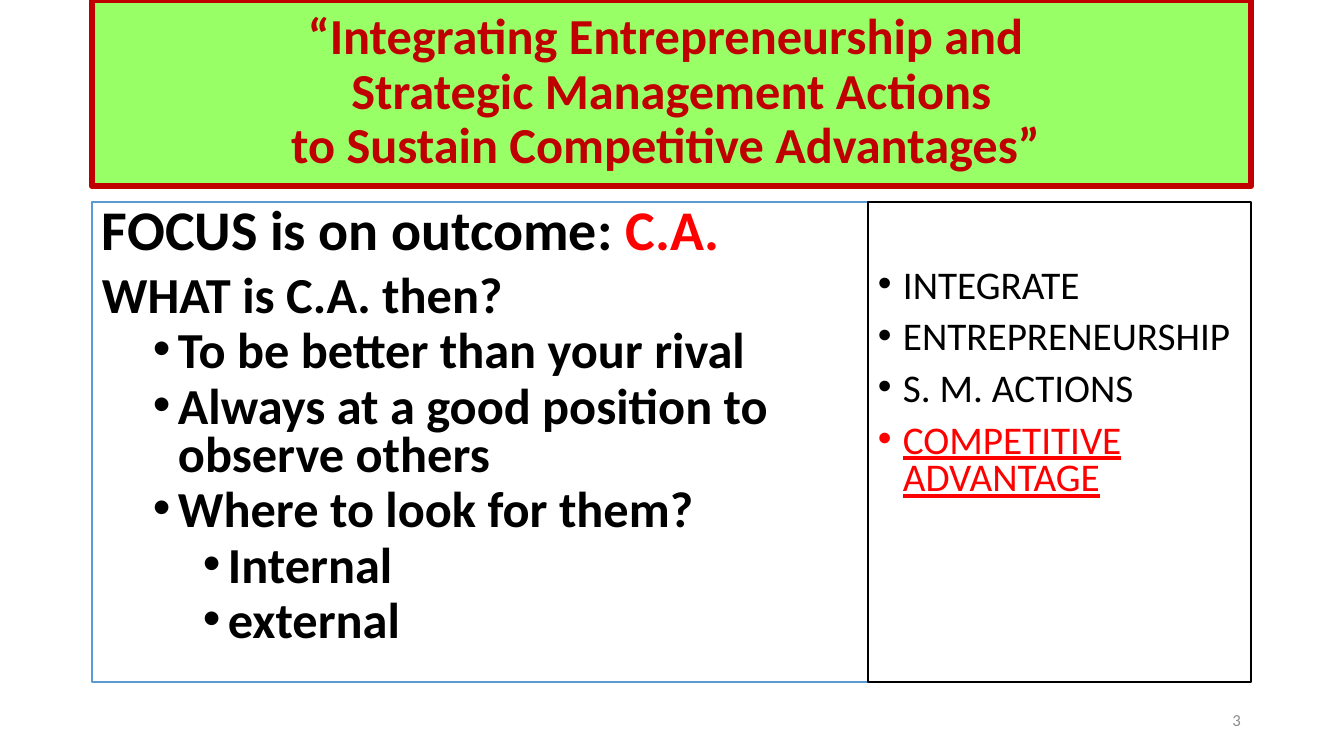
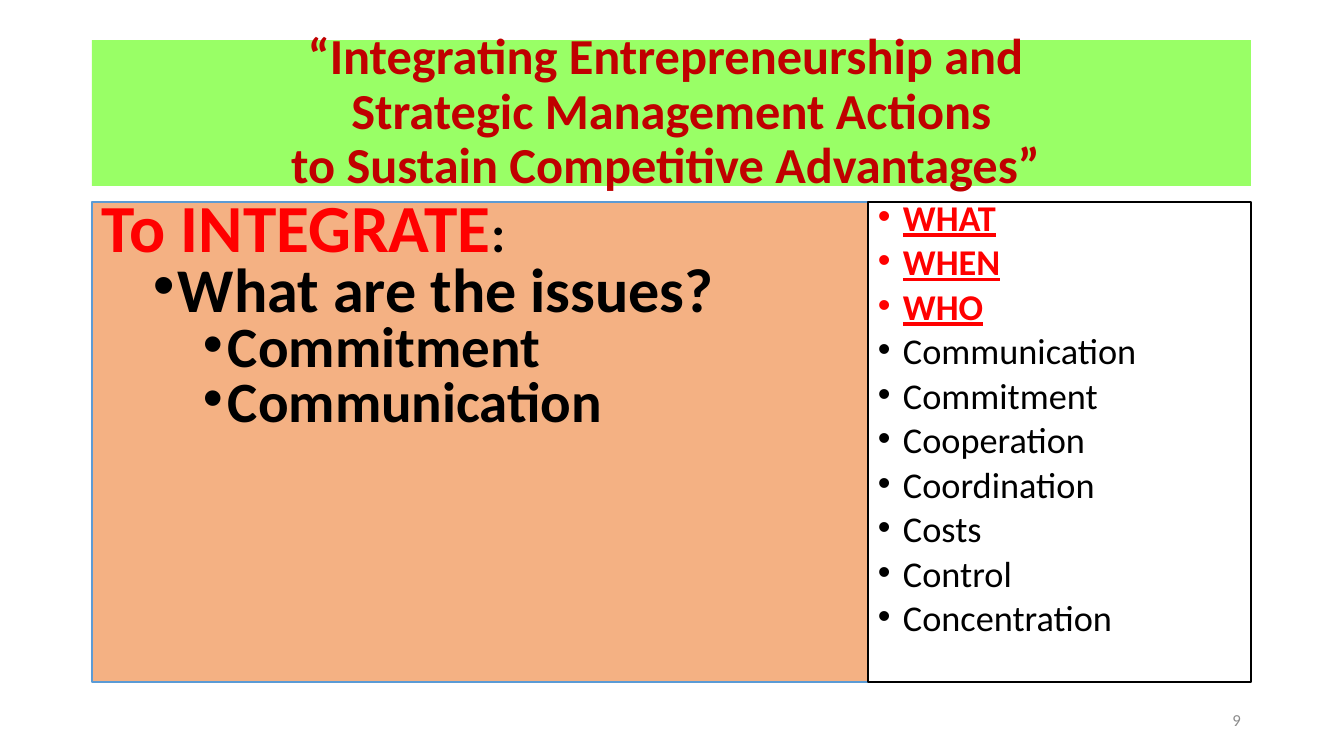
from lxml.etree import SubElement
from pptx import Presentation
from pptx.dml.color import RGBColor
from pptx.enum.text import MSO_ANCHOR as Anchor, PP_ALIGN as Align
from pptx.oxml.ns import qn
from pptx.util import Emu, Pt

PX = 914400 / 100.8
FONT = "Calibri"
COLORS = {
    "lime": "99FF66", "crimson": "C00000", "red": "FF0000", "black": "000000",
    "white": "FFFFFF", "blue": "5B9BD5", "peach": "F4B183", "gray": "8C8C8C",
}
WIDTH, HEIGHT = 1344, 756
LEFT, RIGHT, SPLIT = 92, 1251, 868
TITLE_BOTTOM, PANEL_TOP, PANEL_HEIGHT = 186, 202, 480
NUMBER_TOP, NUMBER_WIDTH, NUMBER_HEIGHT = 700, 302, 40
HANGING = 25
INDENTS = {1: 25, 2: 76, 3: 126}
SPACE_BEFORE = {0: 10, 1: 10, 2: 5, 3: 5}

TITLE = [
    "“Integrating Entrepreneurship and ",
    "Strategic Management Actions",
    " to Sustain Competitive Advantages”  ",
]


def bold(text, size, color="black"):
    return text, size, color, True, False


def plain(text, size):
    return text, size, "black", False, False


SLIDES = [
    {
        "number": "3", "title_top": 0, "title_line": ("crimson", 4.5),
        "focus_fill": "white", "spacing": 0.8, "keywords_inset": 67,
        "focus": [
            (0, [bold("FOCUS is on outcome: ", 40), bold("C.A.", 40, "red")]),
            (0, [bold("WHAT is C.A. then?", 36)]),
            (2, [bold("To be better than your rival", 36)]),
            (2, [bold("Always at a good position to observe others", 36)]),
            (2, [bold("Where to look for them?", 36)]),
            (3, [bold("Internal", 36)]),
            (3, [bold("external", 36)]),
        ],
        "keywords": [
            (1, [plain(word, 28)])
            for word in ("INTEGRATE", "ENTREPRENEURSHIP", "S. M. ACTIONS")
        ] + [(1, [("COMPETITIVE ADVANTAGE", 28, "red", False, True)])],
    },
    {
        "number": "9", "title_top": 40, "title_line": None,
        "focus_fill": "peach", "spacing": 0.7, "keywords_inset": 5,
        "focus": [
            (0, [bold("To INTEGRATE", 48.1, "red"), bold(":", 37)]),
            (2, [bold("What are the issues?", 44.4)]),
            (3, [bold("Commitment", 40.7)]),
            (3, [bold("Communication", 40.7)]),
        ],
        "keywords": [
            (1, [(word, 25.9, "red", True, True)])
            for word in ("WHAT", "WHEN", "WHO")
        ] + [
            (1, [plain(word, 25.9)])
            for word in ("Communication", "Commitment", "Cooperation",
                         "Coordination", "Costs", "Control", "Concentration")
        ],
    },
]


def px(value):
    return Emu(round(value * PX))


def rgb(name):
    return RGBColor.from_string(COLORS[name])


def add_box(slide, left, top, width, height, fill=None, line=None,
            anchor=Anchor.TOP, top_inset=5):
    box = slide.shapes.add_textbox(px(left), px(top), px(width), px(height))
    if fill:
        box.fill.solid()
        box.fill.fore_color.rgb = rgb(fill)
    if line:
        color, weight = line
        box.line.color.rgb = rgb(color)
        box.line.width = Pt(weight)
    frame = box.text_frame
    frame.word_wrap = True
    frame.vertical_anchor = anchor
    frame.margin_left = frame.margin_right = px(10)
    frame.margin_top, frame.margin_bottom = px(top_inset), px(5)
    return frame


def add_run(paragraph, text, size, color, is_bold=False, underline=False):
    run = paragraph.add_run()
    run.text = text
    font = run.font
    font.name, font.size, font.bold = FONT, Pt(size), is_bold
    font.underline = underline
    font.color.rgb = rgb(color)


def add_bullet(paragraph, level):
    props = paragraph._p.get_or_add_pPr()
    props.set("marL", str(px(INDENTS[level])))
    props.set("indent", str(-px(HANGING)))
    SubElement(props, qn("a:buFont")).set("typeface", "Arial")
    SubElement(props, qn("a:buChar")).set("char", "•")


def fill_panel(frame, items, spacing):
    for index, (level, runs) in enumerate(items):
        paragraph = frame.add_paragraph() if index else frame.paragraphs[0]
        paragraph.line_spacing = spacing
        paragraph.space_before = Pt(SPACE_BEFORE[level])
        if level:
            add_bullet(paragraph, level)
        for run in runs:
            add_run(paragraph, *run)


def add_title(slide, top, line):
    frame = add_box(slide, LEFT, top, RIGHT - LEFT, TITLE_BOTTOM - top,
                    "lime", line, Anchor.MIDDLE)
    paragraph = frame.paragraphs[0]
    paragraph.alignment = Align.CENTER
    paragraph.line_spacing = 0.9
    for index, text in enumerate(TITLE):
        if index:
            paragraph.add_line_break()
        add_run(paragraph, *bold(text, 36, "crimson"))


def add_number(slide, number):
    frame = add_box(slide, RIGHT - NUMBER_WIDTH, NUMBER_TOP, NUMBER_WIDTH,
                    NUMBER_HEIGHT, anchor=Anchor.MIDDLE)
    frame.paragraphs[0].alignment = Align.RIGHT
    add_run(frame.paragraphs[0], number, 12, "gray")


def build_slide(deck, content):
    slide = deck.slides.add_slide(deck.slide_layouts[6])
    add_title(slide, content["title_top"], content["title_line"])
    focus = add_box(slide, LEFT, PANEL_TOP, SPLIT - LEFT, PANEL_HEIGHT,
                    content["focus_fill"], ("blue", 1))
    fill_panel(focus, content["focus"], content["spacing"])
    add_number(slide, content["number"])
    keywords = add_box(slide, SPLIT, PANEL_TOP, RIGHT - SPLIT, PANEL_HEIGHT,
                       "white", ("black", 1),
                       top_inset=content["keywords_inset"])
    fill_panel(keywords, content["keywords"], content["spacing"])


def main():
    deck = Presentation()
    deck.slide_width, deck.slide_height = px(WIDTH), px(HEIGHT)
    for content in SLIDES:
        build_slide(deck, content)
    deck.save("out.pptx")


if __name__ == "__main__":
    main()
